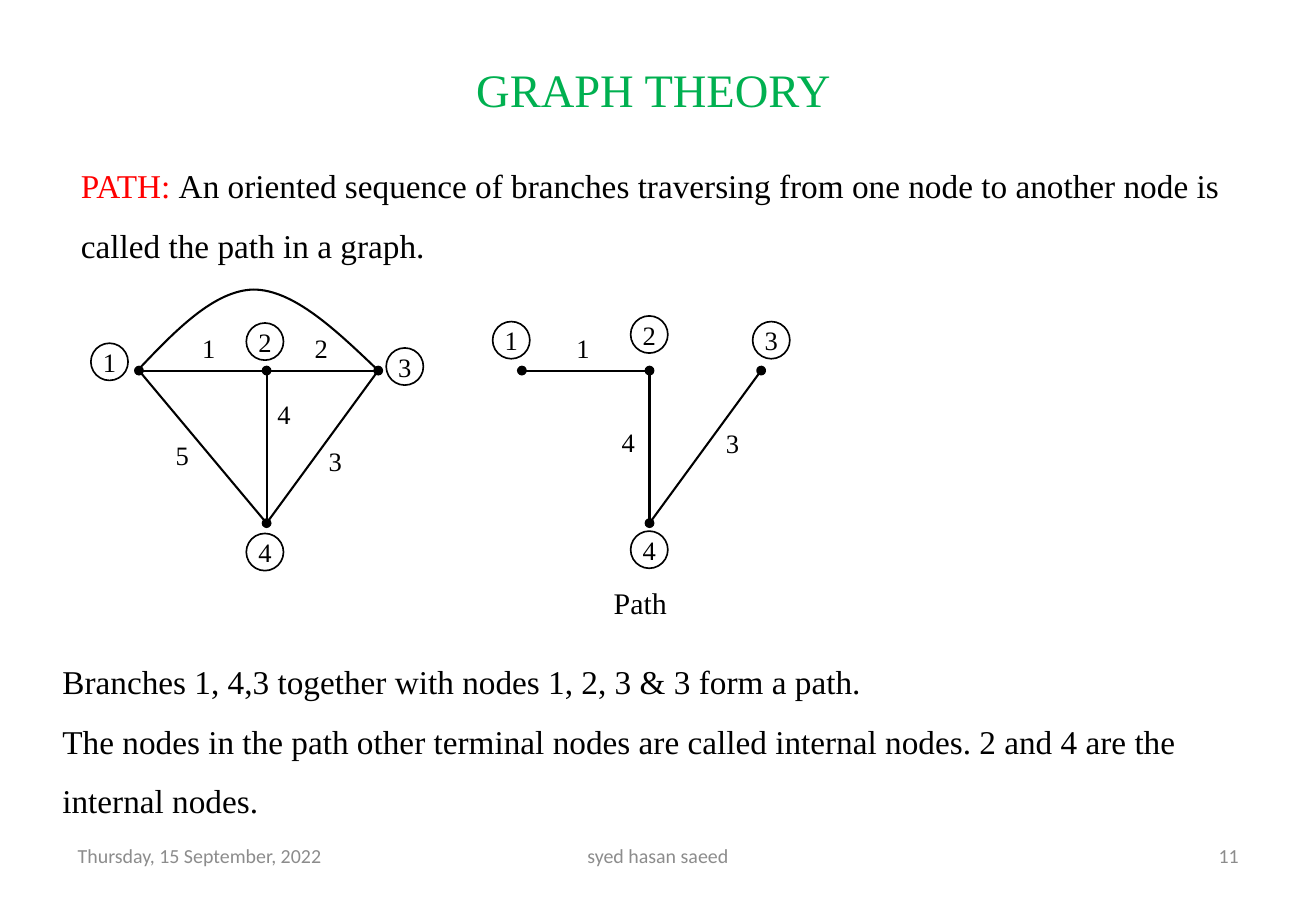
from dataclasses import dataclass

from lxml import etree
from pptx import Presentation
from pptx.dml.color import RGBColor
from pptx.enum.shapes import MSO_CONNECTOR, MSO_SHAPE
from pptx.enum.text import MSO_ANCHOR, MSO_AUTO_SIZE, PP_ALIGN
from pptx.oxml.ns import qn
from pptx.util import Cm, Pt

LINE, OVAL = MSO_CONNECTOR.STRAIGHT, MSO_SHAPE.OVAL
LEFT, MID, RIGHT = PP_ALIGN.LEFT, PP_ALIGN.CENTER, PP_ALIGN.RIGHT
CENTRE, TOP = MSO_ANCHOR.MIDDLE, MSO_ANCHOR.TOP
FIXED = MSO_AUTO_SIZE.NONE


@dataclass(frozen=True)
class Theme:
    serif: str = "Times New Roman"
    sans: str = "Calibri"
    ink: RGBColor = RGBColor(0, 0, 0)
    green: RGBColor = RGBColor(0x00, 0xB0, 0x50)
    red: RGBColor = RGBColor(0xFF, 0, 0)
    grey: RGBColor = RGBColor(0x8C, 0x8C, 0x8C)
    title: float = 28
    body: float = 20
    note: float = 18
    mark: float = 16
    foot: float = 12
    branch: float = 1.25
    ring: float = 1


@dataclass(frozen=True)
class Box:
    left: float
    top: float
    width: float
    height: float


@dataclass(frozen=True)
class Label:
    text: str
    left: float
    top: float


@dataclass(frozen=True)
class Branch:
    start: int
    end: int
    dots: tuple[str, ...] = ()


@dataclass(frozen=True)
class Graph:
    shift: float
    branches: list[Branch]
    nodes: list[Label]
    labels: list[Label]


THEME = Theme()
RING = 0.79  # diameter of a node ring
DOTS = {1: (2.95, 7.87), 2: (5.66, 7.87), 3: (8.03, 7.87), 4: (5.66, 11.11)}
ARC = [(2.92, 7.87), (3.73, 7.01), (4.55, 6.17), (5.38, 6.15),
       (6.22, 6.15), (7.11, 6.99), (7.98, 7.82)]
HEAD, TAIL = "headEnd", "tailEnd"

WHOLE = Graph(
    0,
    [Branch(1, 2, (HEAD, TAIL)), Branch(2, 3, (TAIL,)), Branch(2, 4, (TAIL,)),
     Branch(1, 4), Branch(4, 3)],
    [Label("1", 1.93, 7.29), Label("2", 5.23, 6.86),
     Label("3", 8.2, 7.39), Label("4", 5.23, 11.33)],
    [Label("1", 4.04, 6.93), Label("2", 6.43, 6.93), Label("5", 3.48, 9.19),
     Label("4", 5.64, 8.33), Label("3", 6.73, 9.32)],
)
ROUTE = Graph(
    8.13,
    [Branch(1, 2, (HEAD, TAIL)), Branch(2, 4, (TAIL,)), Branch(4, 3, (TAIL,))],
    [Label("1", 10.46, 6.83), Label("2", 13.39, 6.71),
     Label("3", 15.98, 6.83), Label("4", 13.39, 11.28)],
    [Label("1", 11.99, 6.93), Label("4", 12.95, 8.92), Label("3", 15.16, 8.94)],
)


def place(shape, box: Box) -> None:
    shape.left, shape.top = Cm(box.left), Cm(box.top)
    shape.width, shape.height = Cm(box.width), Cm(box.height)


def write(shape, lines: list[str], size: float, color: RGBColor = THEME.ink,
          face: str = THEME.serif, align: PP_ALIGN = LEFT,
          anchor: MSO_ANCHOR = TOP, space: float = 1) -> None:
    frame = shape.text_frame
    frame.text = "\n".join(lines)
    frame.word_wrap = True
    frame.auto_size = FIXED
    frame.vertical_anchor = anchor
    for par in frame.paragraphs:
        par.alignment = align
        par.line_spacing = space
        par.space_before = Pt(0)
        par.font.size = Pt(size)
        par.font.name = face
        par.font.color.rgb = color


def add_text(slide, box: Box, text: str, size: float, **style):
    shape = slide.shapes.add_textbox(0, 0, 0, 0)
    place(shape, box)
    write(shape, [text], size, **style)
    return shape


def ink(shape, width: float) -> None:
    shape.line.color.rgb = THEME.ink
    shape.line.width = Pt(width)


def add_branch(slide, branch: Branch, shift: float) -> None:
    (ax, ay), (bx, by) = DOTS[branch.start], DOTS[branch.end]
    line = slide.shapes.add_connector(
        LINE, Cm(ax + shift), Cm(ay), Cm(bx + shift), Cm(by))
    ink(line, THEME.branch)
    for end in branch.dots:
        etree.SubElement(line.line._get_or_add_ln(), qn(f"a:{end}"), type="oval")
    etree.SubElement(line._element.spPr, qn("a:effectLst"))


def add_node(slide, node: Label) -> None:
    ring = slide.shapes.add_shape(OVAL, 0, 0, 0, 0)
    place(ring, Box(node.left, node.top, RING, RING))
    ring.shadow.inherit = False
    ring.fill.background()
    ink(ring, THEME.ring)
    write(ring, [node.text], THEME.mark, align=MID, anchor=CENTRE)
    frame = ring.text_frame
    frame.margin_left = frame.margin_right = 0
    frame.margin_top = frame.margin_bottom = 0


def add_graph(slide, graph: Graph) -> None:
    for branch in graph.branches:
        add_branch(slide, branch, graph.shift)
    for node in graph.nodes:
        add_node(slide, node)
    for label in graph.labels:
        add_text(slide, Box(label.left, label.top, 1.19, 0.94), label.text, THEME.mark)


def add_arc(slide, points: list[tuple[float, float]]) -> None:
    """Draw points as a chain of cubic curves: a start, then three per curve."""
    start, *rest = [(Cm(x), Cm(y)) for x, y in points]
    pen = slide.shapes.build_freeform(*start)
    pen.add_line_segments(rest, close=False)
    arc = pen.convert_to_shape()
    arc.shadow.inherit = False
    arc.fill.background()
    ink(arc, THEME.branch)
    trace = arc._element.find(".//" + qn("a:path"))
    steps = trace.findall(qn("a:lnTo"))
    for i in range(0, len(steps), 3):
        curve = etree.SubElement(trace, qn("a:cubicBezTo"))
        for step in steps[i:i + 3]:
            curve.append(step[0])
            trace.remove(step)


def main() -> None:
    deck = Presentation()
    deck.slide_width, deck.slide_height = Cm(27.94), Cm(19.05)
    slide = deck.slides.add_slide(deck.slide_layouts[1])

    title, body = slide.placeholders
    place(title, Box(0.66, 0.99, 26.42, 1.78))
    write(title, ["GRAPH THEORY"], THEME.title, THEME.green, align=MID, anchor=CENTRE)
    place(body, Box(1.07, 13.49, 25.98, 3.96))
    write(body, [
        "Branches 1, 4,3 together with nodes 1, 2, 3 & 3 form a path.",
        "The nodes in the path other terminal nodes are called internal nodes. "
        "2 and 4 are the internal nodes.",
    ], THEME.body, space=1.5)
    for par in body.text_frame.paragraphs:
        props = par._p.get_or_add_pPr()
        props.set("marL", "0")
        props.set("indent", "0")
        props.insert_element_before(
            etree.Element(qn("a:buNone")), "a:tabLst", "a:defRPr", "a:extLst")

    term = add_text(slide, Box(1.47, 2.97, 25.4, 2.82), "", THEME.body, space=1.5)
    par = term.text_frame.paragraphs[0]
    lead = par.add_run()
    lead.text = "PATH: "
    lead.font.color.rgb = THEME.red
    par.add_run().text = ("An oriented sequence of branches traversing from one node "
                          "to another node is called the path in a graph.")

    add_graph(slide, WHOLE)
    add_arc(slide, ARC)
    add_graph(slide, ROUTE)
    add_text(slide, Box(12.78, 12.29, 1.98, 1.02), "Path", THEME.note)

    for text, left, width, align in [
        ("Thursday, 15 September, 2022", 1.4, 6.53, LEFT),
        ("syed hasan saeed", 9.55, 8.84, MID),
        ("11", 20.02, 6.53, RIGHT),
    ]:
        add_text(slide, Box(left, 17.65, width, 1.02), text, THEME.foot,
                 color=THEME.grey, face=THEME.sans, align=align, anchor=CENTRE)
    deck.save("out.pptx")


if __name__ == "__main__":
    main()
